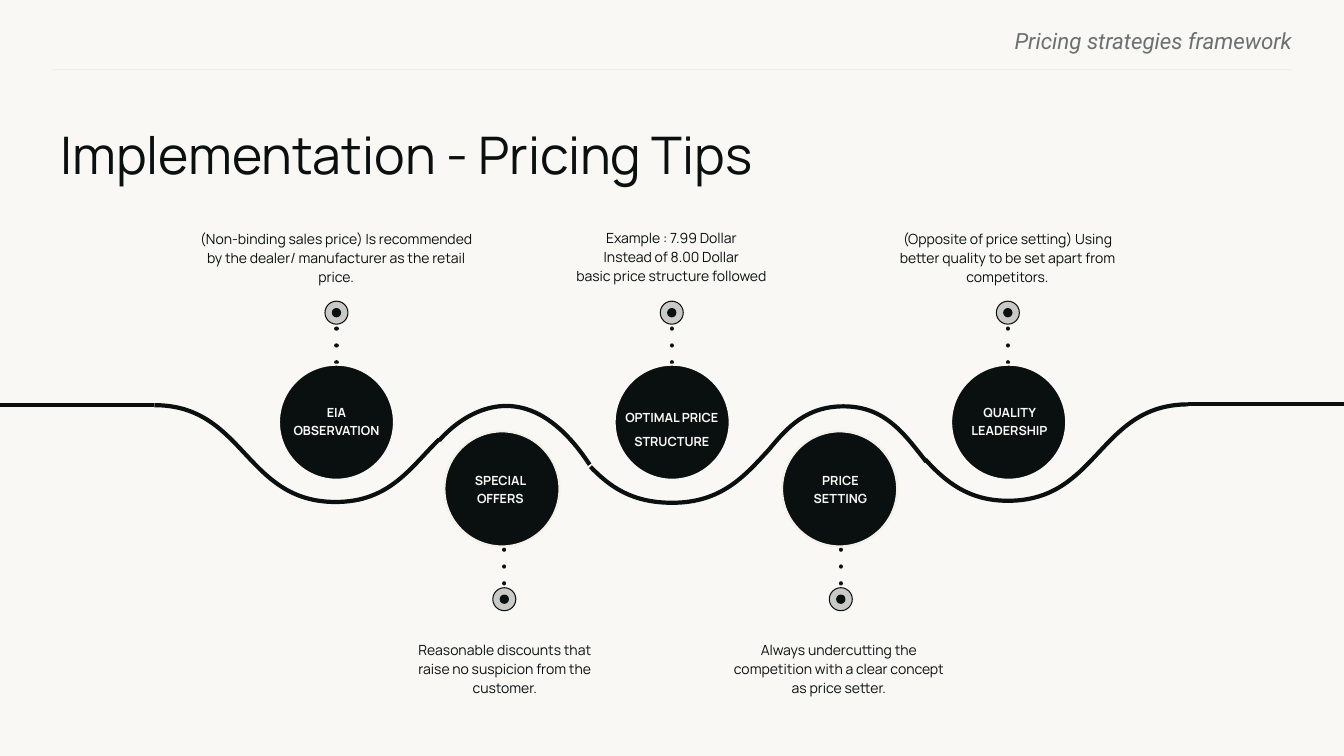
"""Build a slide of pricing tips along a winding road."""
from lxml import etree
from pptx import Presentation
from pptx import util as u
from pptx.dml import color
from pptx.enum import dml, shapes, text
from pptx.oxml import ns

Cm, Pt = u.Cm, u.Pt
HUES = {"ink": "09100F", "paper": "F9F8F5", "cream": "F5F1E8",
        "grey": "6C706F", "rule": "EFEFEF"}
BENDS = [
    [(14.88, 11.76), (15.37, 12.27), (15.93, 12.67), (16.94, 12.67),
     (18.19, 12.67), (18.77, 11.99), (19.38, 11.33)],
    [(19.38, 11.33), (19.84, 10.77), (20.32, 10.24), (21.26, 10.24),
     (22.33, 10.24), (22.81, 10.97), (23.34, 11.63)],
    [(3.89, 10.21), (6.17, 10.21), (6.17, 12.65), (8.46, 12.65),
     (9.83, 12.65), (10.36, 11.76), (11.07, 11.07)],
    [(23.32, 11.58), (23.83, 12.14), (24.41, 12.62), (25.4, 12.62),
     (27.69, 12.62), (27.69, 10.19), (29.95, 10.19)],
    [(11.07, 11.1), (11.07, 11.1), (11.77, 10.23), (12.76, 10.23),
     (13.38, 10.23), (14.12, 10.58), (14.86, 11.71)],
]
STOPS = [
    (True, 8.48, 8.48, (8.48, 10.12, 2.64, 0.84), 1.2, (8.47, 5.74, 7.14),
     "EIA OBSERVATION",
     "(Non-binding sales price) Is recommended by the dealer/ manufacturer "
     "as the retail price."),
    (True, 16.93, 16.94, (16.93, 10.11, 3.78, 0.99), 1.58,
     (16.92, 5.71, 6.55), "OPTIMAL PRICE STRUCTURE",
     "Example : 7.99 Dollar\vInstead of 8.00 Dollar\v"
     "basic price structure followed"),
    (True, 25.4, 25.42, (25.44, 10.13, 2.41, 0.84), 1.2, (25.39, 5.74, 6.25),
     "QUALITY LEADERSHIP",
     "(Opposite of price setting) Using better quality to be set apart "
     "from competitors."),
    (False, 12.71, 12.65, (12.61, 11.84, 2.01, 0.84), 1.2,
     (12.72, 16.09, 4.62), "SPECIAL OFFERS",
     "Reasonable discounts that raise no suspicion from the customer."),
    (False, 21.19, 21.16, (21.18, 11.84, 1.98, 0.84), 1.2,
     (21.14, 16.09, 5.61), "PRICE SETTING",
     "Always undercutting the competition with a clear concept "
     "as price setter."),
]


def rgb(hue):
    """Return the named colour."""
    return color.RGBColor.from_string(HUES[hue])


def write(frame, words, size, hue, align, face="Manrope", gap=None,
          bold=False, slant=False):
    """Fill a text frame with one styled paragraph."""
    frame.margin_left = frame.margin_right = 0
    frame.margin_top = frame.margin_bottom = 0
    frame.word_wrap = True
    frame.auto_size = text.MSO_AUTO_SIZE.NONE
    frame.vertical_anchor = text.MSO_ANCHOR.TOP
    para = frame.paragraphs[0]
    para.text = words
    para.alignment = align
    para.line_spacing = gap
    font = para.font
    font.name, font.size, font.bold, font.italic = face, Pt(size), bold, slant
    font.color.rgb = rgb(hue)


def label(slide, box, *args, **style):
    """Add a text box in the given box."""
    area = slide.shapes.add_textbox(*map(Cm, box))
    write(area.text_frame, *args, **style)


def line(slide, ends, hue, width, dots=False):
    """Add a straight line between two points."""
    rod = slide.shapes.add_connector(shapes.MSO_CONNECTOR.STRAIGHT,
                                     *map(Cm, ends))
    rod.line.color.rgb = rgb(hue)
    rod.line.width = Pt(width)
    if dots:
        rod.line.dash_style = dml.MSO_LINE.ROUND_DOT
        edge = rod.element.spPr.find(ns.qn("a:ln"))
        edge.set("cap", "rnd")
        edge.find(ns.qn("a:prstDash")).set("val", "dot")
    etree.SubElement(rod.element.spPr, ns.qn("a:effectLst"))


def disc(slide, mid, size, edge, width, alpha=None):
    """Add an ink circle around a centre, see-through if alpha is given."""
    box = (mid[0] - size / 2, mid[1] - size / 2, size, size)
    ball = slide.shapes.add_shape(shapes.MSO_SHAPE.OVAL, *map(Cm, box))
    ball.shadow.inherit = False
    ball.fill.solid()
    ball.fill.fore_color.rgb = rgb("ink")
    ball.line.color.rgb = rgb(edge)
    ball.line.width = Pt(width)
    if alpha:
        tint = ball.element.spPr.find(ns.qn("a:solidFill"))[0]
        etree.SubElement(tint, ns.qn("a:alpha"), val=str(alpha * 1000))


def curve(slide, spots):
    """Draw a smooth line through a start and triples of curve points."""
    first, *rest = [(Cm(x), Cm(y)) for x, y in spots]
    pen = slide.shapes.build_freeform(*first)
    pen.add_line_segments(rest, close=False)
    way = pen.convert_to_shape()
    way.shadow.inherit = False
    way.fill.background()
    way.line.color.rgb = rgb("ink")
    way.line.width = Pt(3)
    legs = list(way.element.spPr.iter(ns.qn("a:lnTo")))
    route = legs[0].getparent()
    for i in range(0, len(legs), 3):
        arc = etree.SubElement(route, ns.qn("a:cubicBezTo"))
        for leg in legs[i:i + 3]:
            arc.append(leg[0])
            route.remove(leg)


def head(slide, box):
    """Place the running head, its rule and the title in a box."""
    left, top, wide = box
    label(slide, (left + wide - 13.06, top, 13.06, 0.61),
          "Pricing strategies framework", 16, "grey", text.PP_ALIGN.RIGHT,
          face="Roboto", slant=True)
    line(slide, (left + wide, top + 1.06, left, top + 1.06), "rule", 0.75)
    title = slide.shapes.title
    title.left, title.top = Cm(left + 0.2), Cm(top + 2.41)
    title.width, title.height = Cm(wide), Cm(1.73)
    write(title.text_frame, "Implementation - Pricing Tips", 37, "ink",
          text.PP_ALIGN.LEFT)


def road(slide, wide):
    """Draw the winding road from edge to edge."""
    line(slide, (29.95, 10.19, wide, 10.19), "ink", 3)
    line(slide, (0, 10.21, 3.89, 10.21), "ink", 3)
    for spots in BENDS:
        curve(slide, spots)


def stop(slide, above, pin, mid, tag, gap, memo, name, note):
    """Place one tip: marker, dotted link, disc, name and note."""
    core, eye, way, edge = ((10.64, 7.88, 1, "paper") if above
                            else (12.32, 15.1, -1, "cream"))
    line(slide, (pin, eye + way * 0.4, pin, eye + way * 1.31), "ink", 3,
         dots=True)
    disc(slide, (pin, eye), 0.58, "ink", 0.75, alpha=20)
    disc(slide, (pin, eye), 0.2, "ink", 1)
    disc(slide, (mid, core), 2.9, edge, 1.5)
    x, y, wide = memo
    label(slide, (x - wide / 2, y, wide, 1.42), note, 10, "ink",
          text.PP_ALIGN.CENTER, gap=1.15)
    x, y, wide, high = tag
    label(slide, (x - wide / 2, y, wide, high), name, 9, "paper",
          text.PP_ALIGN.CENTER, gap=gap, bold=True)


def main():
    """Build and save the slide."""
    deck = Presentation()
    deck.slide_width, deck.slide_height = Cm(33.87), Cm(19.05)
    slide = deck.slides.add_slide(deck.slide_layouts[5])
    slide.background.fill.solid()
    slide.background.fill.fore_color.rgb = rgb("paper")
    head(slide, (1.32, 0.69, 31.24))
    road(slide, 33.87)
    for tip in STOPS:
        stop(slide, *tip)
    deck.save("out.pptx")


if __name__ == "__main__":
    main()
